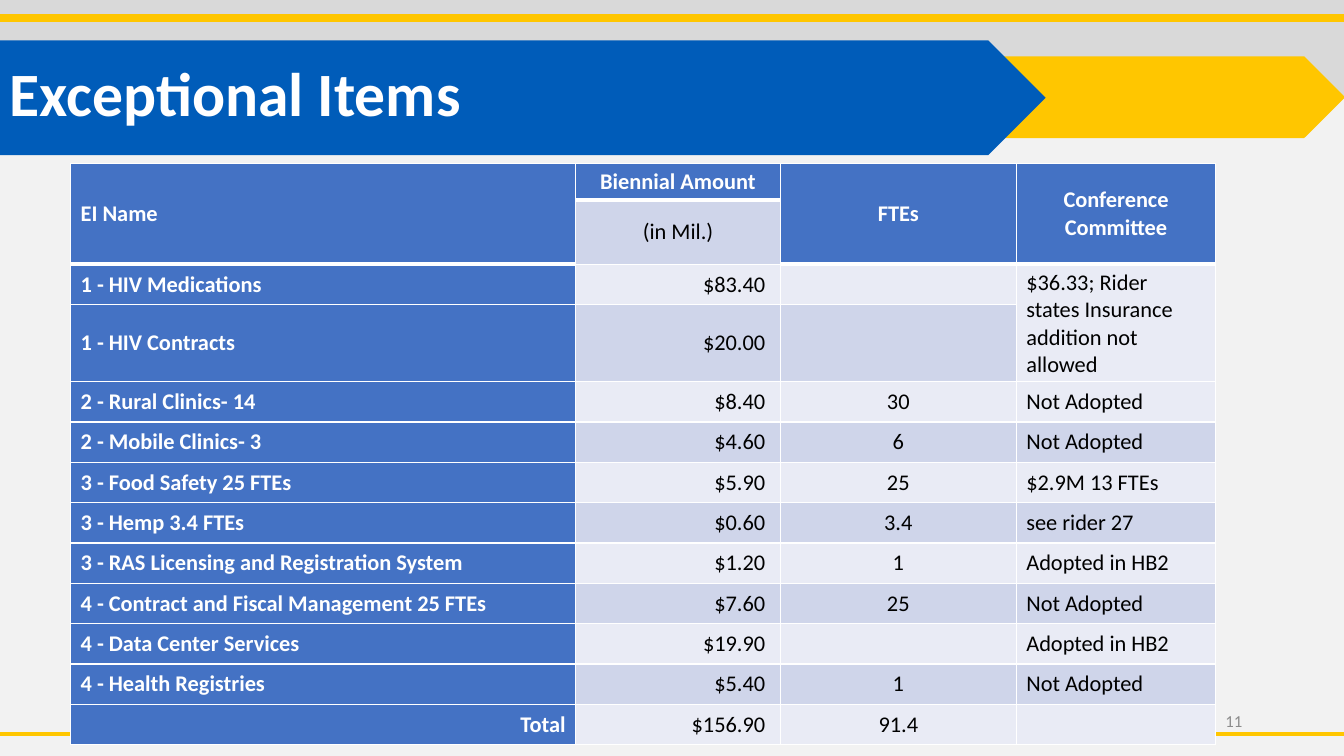
from dataclasses import dataclass

from lxml import etree
from pptx import Presentation
from pptx import util as u
from pptx.dml import color
from pptx.enum import shapes, text
from pptx.oxml import ns


@dataclass(frozen=True)
class Theme:
    font: str = "Calibri"
    background: str = "F2F2F2"
    band: str = "D9D9D9"
    gold: str = "FFC600"
    blue: str = "005CB9"
    header: str = "4472C4"
    light_row: str = "E9EBF5"
    dark_row: str = "CFD5EA"
    white: str = "FFFFFF"
    black: str = "000000"
    gray: str = "8C8C8C"
    title_size: int = 44
    table_size: int = 16
    number_size: int = 12


THEME = Theme()
LEFT, CENTER, RIGHT = text.PP_ALIGN.LEFT, text.PP_ALIGN.CENTER, text.PP_ALIGN.RIGHT

COLUMN_WIDTHS = [5.01, 2.03, 2.34, 1.98]
COLUMN_ALIGNMENTS = [LEFT, RIGHT, CENTER, LEFT]
HEADER_ROWS = 2
HEADER_HEIGHT, ITEM_HEIGHT = 0.36, 0.4
MERGES = [(0, 0), (0, 2), (0, 3), (2, 3)]
ROWS = [
    ["EI Name", "Biennial Amount", "FTEs", "Conference Committee"],
    ["", "(in Mil.)", "", ""],
    ["1 - HIV Medications", "$83.40 ", "", "$36.33; Rider states Insurance addition not allowed"],
    ["1 - HIV Contracts", "$20.00 ", "", ""],
    ["2 - Rural Clinics- 14", "$8.40 ", "30", "Not Adopted"],
    ["2 - Mobile Clinics- 3", "$4.60 ", "6", "Not Adopted"],
    ["3 - Food Safety 25 FTEs", "$5.90 ", "25", "$2.9M 13 FTEs"],
    ["3 - Hemp 3.4 FTEs", "$0.60 ", "3.4", "see rider 27"],
    ["3 - RAS Licensing and Registration System", "$1.20 ", "1", "Adopted in HB2"],
    ["4 - Contract and Fiscal Management 25 FTEs", "$7.60 ", "25", "Not Adopted"],
    ["4 - Data Center Services", "$19.90 ", "", "Adopted in HB2"],
    ["4 - Health Registries", "$5.40 ", "1", "Not Adopted"],
    ["Total", "$156.90 ", "91.4", ""],
]


def rgb(value):
    return color.RGBColor.from_string(value)


def add_run(paragraph, words, size, tint, bold=False):
    run = paragraph.add_run()
    run.text = words
    run.font.name = THEME.font
    run.font.size = u.Pt(size)
    run.font.bold = bold
    run.font.color.rgb = rgb(tint)


def add_block(slide, kind, left, top, width, height, fill):
    shape = slide.shapes.add_shape(kind, *map(u.Inches, (left, top, width, height)))
    shape.shadow.inherit = False
    shape.fill.solid()
    shape.fill.fore_color.rgb = rgb(fill)
    shape.line.fill.background()


def add_rule(slide, y, weight):
    line = slide.shapes.add_connector(
        shapes.MSO_CONNECTOR.STRAIGHT, 0, u.Inches(y), u.Inches(13.33), u.Inches(y))
    line.line.color.rgb = rgb(THEME.gold)
    line.line.width = u.Pt(weight)
    etree.SubElement(line._element.spPr, ns.qn("a:effectLst"))


def add_text(slide, words, left, top, width, height, size, tint, align=LEFT, bold=False, spacing=1.0):
    box = slide.shapes.add_textbox(*map(u.Inches, (left, top, width, height)))
    frame = box.text_frame
    frame.word_wrap = True
    frame.vertical_anchor = text.MSO_ANCHOR.MIDDLE
    paragraph = frame.paragraphs[0]
    paragraph.alignment = align
    paragraph.line_spacing = spacing
    add_run(paragraph, words, size, tint, bold)


def set_borders(cell, bottom_weight):
    properties = cell._tc.get_or_add_tcPr()
    for tag, weight in (("lnL", 1), ("lnR", 1), ("lnT", 1), ("lnB", bottom_weight)):
        border = etree.SubElement(properties, ns.qn(f"a:{tag}"), w=str(u.Pt(weight)))
        fill = etree.SubElement(border, ns.qn("a:solidFill"))
        etree.SubElement(fill, ns.qn("a:srgbClr"), val=THEME.white)


def style_cell(cell, words, row, column):
    heading = row == 0 or column == 0
    set_borders(cell, 3 if row == 0 else 1)
    cell.fill.solid()
    band = THEME.dark_row if row % 2 else THEME.light_row
    cell.fill.fore_color.rgb = rgb(THEME.header if heading else band)
    cell.vertical_anchor = text.MSO_ANCHOR.MIDDLE
    paragraph = cell.text_frame.paragraphs[0]
    paragraph.alignment = COLUMN_ALIGNMENTS[column]
    if row < HEADER_ROWS and column > 0:
        paragraph.alignment = CENTER
    elif words == "Total":
        paragraph.alignment = RIGHT
    if words:
        add_run(paragraph, words, THEME.table_size, THEME.white if heading else THEME.black, heading)


def add_items_table(slide):
    frame = slide.shapes.add_table(
        len(ROWS), len(COLUMN_WIDTHS), *map(u.Inches, (0.7, 1.62, sum(COLUMN_WIDTHS), 5.12)))
    table = frame.table
    table.first_col = True
    for column, width in zip(table.columns, COLUMN_WIDTHS):
        column.width = u.Inches(width)
    for index, row in enumerate(table.rows):
        row.height = u.Inches(HEADER_HEIGHT if index < HEADER_ROWS else ITEM_HEIGHT)
    for row, column in MERGES:
        table.cell(row, column).merge(table.cell(row + 1, column))
    for row, values in enumerate(ROWS):
        for column, words in enumerate(values):
            cell = table.cell(row, column)
            if not cell.is_spanned:
                style_cell(cell, words, row, column)


def main():
    presentation = Presentation()
    presentation.slide_width = u.Inches(13.33)
    presentation.slide_height = u.Inches(7.5)
    slide = presentation.slides.add_slide(presentation.slide_layouts[6])
    slide.background.fill.solid()
    slide.background.fill.fore_color.rgb = rgb(THEME.background)

    add_block(slide, shapes.MSO_SHAPE.RECTANGLE, 0, -0.03, 13.33, 0.98, THEME.band)
    add_block(slide, shapes.MSO_SHAPE.PENTAGON, 7.09, 0.56, 6.25, 0.81, THEME.gold)
    add_block(slide, shapes.MSO_SHAPE.PENTAGON, 0, 0.4, 10.37, 1.14, THEME.blue)
    add_rule(slide, 7.28, 3)
    add_rule(slide, 0.18, 6)
    add_text(slide, "Exceptional Items", 0, 0.23, 11.5, 1.45,
             THEME.title_size, THEME.white, bold=True, spacing=0.9)
    add_items_table(slide)
    add_text(slide, "11", 9.42, 6.95, 3, 0.4, THEME.number_size, THEME.gray, align=RIGHT)
    presentation.save("out.pptx")


if __name__ == "__main__":
    main()
